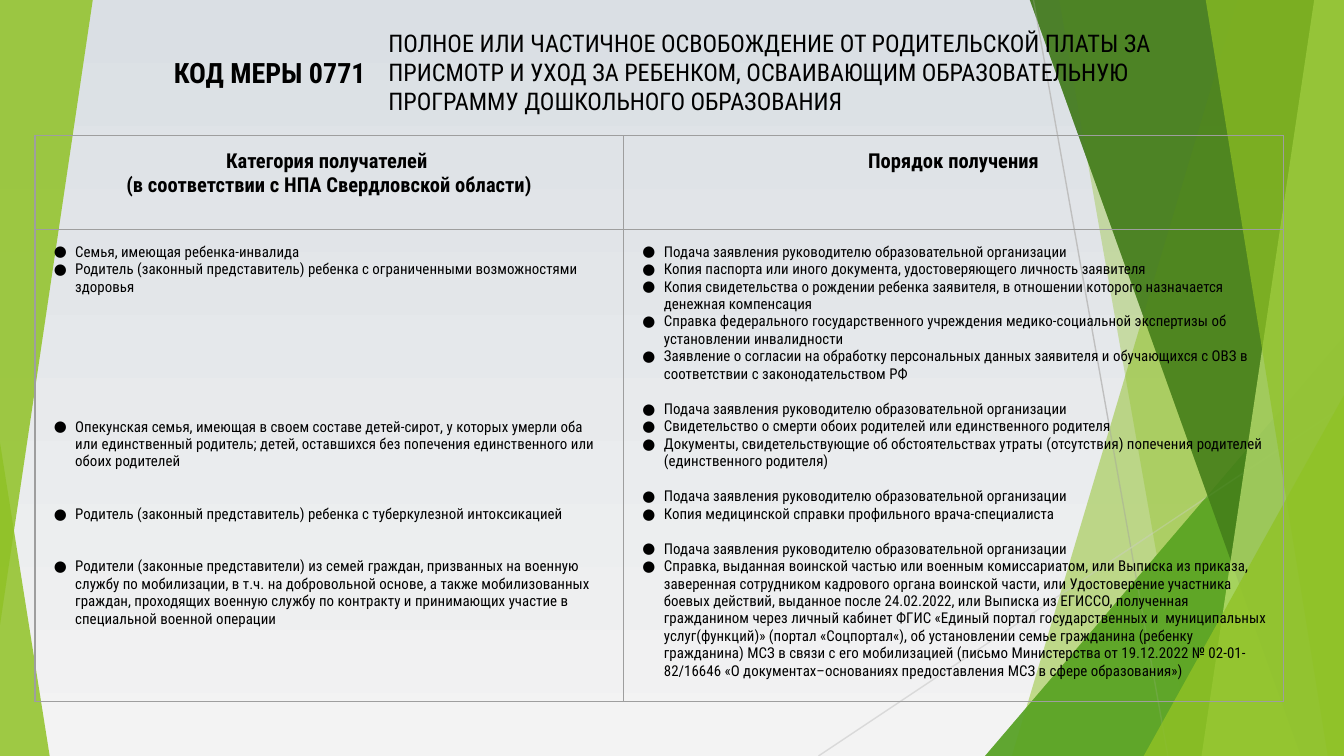
from lxml import etree
from pptx import Presentation
from pptx import util as u
from pptx.dml.color import RGBColor
from pptx.enum import shapes, text
from pptx.oxml import ns

Inches, Pt = u.Inches, u.Pt
COLORS = {
    "text": "000000", "border": "9E9E9E",
    "sky": "DADFE4", "mist": "F3F3F3",
    "lime": "90C226", "green": "54A021", "forest": "3F7819", "pale": "C0E474",
    "gray": "BFBFBF", "silver": "D9D9D9",
}
FONT = "Roboto Condensed"
WIDTH = 10
HEIGHT = WIDTH * 9 / 16
LINE = 9.38  # height of one 8 pt text line, in points
APPLY = "Подача заявления руководителю образовательной организации"

# Each item: text and the number of free lines above it
RECIPIENTS = [
    ("Семья, имеющая ребенка-инвалида", 0),
    ("Родитель (законный представитель) ребенка с ограниченными возможностями здоровья", 0),
    ("Опекунская семья, имеющая в своем составе детей-сирот, у которых умерли оба или "
     "единственный родитель; детей, оставшихся без попечения единственного или обоих родителей", 7),
    ("Родитель (законный представитель) ребенка с туберкулезной интоксикацией", 2),
    ("Родители (законные представители) из семей граждан, призванных на военную службу по "
     "мобилизации, в т.ч. на добровольной основе, а также мобилизованных граждан, проходящих "
     "военную службу по контракту и принимающих участие в специальной военной операции", 2),
]
PROCEDURE = [
    (APPLY, 0),
    ("Копия паспорта или иного документа, удостоверяющего личность заявителя", 0),
    ("Копия свидетельства о рождении ребенка заявителя, в отношении которого назначается "
     "денежная компенсация", 0),
    ("Справка федерального государственного учреждения медико-социальной экспертизы об "
     "установлении инвалидности", 0),
    ("Заявление о согласии на обработку персональных данных заявителя и обучающихся с ОВЗ в "
     "соответствии с законодательством РФ", 0),
    (APPLY, 1),
    ("Свидетельство о смерти обоих родителей или единственного родителя", 0),
    ("Документы, свидетельствующие об обстоятельствах утраты (отсутствия) попечения родителей "
     "(единственного родителя)", 0),
    (APPLY, 1),
    ("Копия медицинской справки профильного врача-специалиста", 0),
    (APPLY, 1),
    ("Справка, выданная воинской частью или военным комиссариатом, или Выписка из приказа, "
     "заверенная сотрудником кадрового органа воинской части, или Удостоверение участника "
     "боевых действий, выданное после 24.02.2022, или Выписка из ЕГИССО, полученная "
     "гражданином через личный кабинет ФГИС «Единый портал государственных и  муниципальных "
     "услуг(функций)» (портал «Соцпортал«), об установлении семье гражданина (ребенку "
     "гражданина) МСЗ в связи с его мобилизацией (письмо Министерства от 19.12.2022 № 02-01-"
     "82/16646 «О документах–основаниях предоставления МСЗ в сфере образования»)", 0),
]


def rgb(name):
    return RGBColor.from_string(COLORS[name])


def add_xml(parent, tag, **attributes):
    return etree.SubElement(parent, ns.qn(tag), attributes)


def set_alpha(fill_parent, percent):
    for color in fill_parent.iter(ns.qn("a:srgbClr")):
        add_xml(color, "a:alpha", val=str(percent * 1000))


class SlideBuilder:
    def __init__(self, slide):
        self.slide = slide

    def background(self, top, bottom, top_alpha):
        fill = self.slide.background.fill
        fill.gradient()
        fill.gradient_angle = 270
        for stop, color, position in zip(fill.gradient_stops, (top, bottom), (0, 1)):
            stop.color.rgb = rgb(color)
            stop.position = position
        first = next(self.slide.background._cSld.iter(ns.qn("a:gs")))
        set_alpha(first, top_alpha)

    def paint(self, shape, color, alpha):
        shape.shadow.inherit = False
        shape.fill.solid()
        shape.fill.fore_color.rgb = rgb(color)
        set_alpha(shape._element.spPr, alpha)
        shape.line.fill.background()

    def polygon(self, points, color, alpha):
        corners = [(Inches(x), Inches(y)) for x, y in points]
        builder = self.slide.shapes.build_freeform(*corners[0])
        builder.add_line_segments(corners[1:], close=True)
        self.paint(builder.convert_to_shape(), color, alpha)

    def triangle(self, box, apex, color, alpha, rotation=0):
        shape = self.slide.shapes.add_shape(
            shapes.MSO_SHAPE.ISOSCELES_TRIANGLE, *map(Inches, box))
        shape.adjustments[0] = apex
        shape.rotation = rotation
        self.paint(shape, color, alpha)

    def line(self, start, end, color):
        connector = self.slide.shapes.add_connector(
            shapes.MSO_CONNECTOR.STRAIGHT, *map(Inches, start + end))
        connector.line.color.rgb = rgb(color)
        connector.line.width = Pt(0.75)
        add_xml(connector._element.spPr, "a:effectLst")

    def paragraph(self, paragraph, content, size, bold=False, align=text.PP_ALIGN.LEFT):
        paragraph.text = content
        paragraph.alignment = align
        font = paragraph.font
        font.name, font.size, font.bold = FONT, Pt(size), bold
        font.color.rgb = rgb("text")

    def text_box(self, box, content, size, insets, **style):
        frame = self.slide.shapes.add_textbox(*map(Inches, box)).text_frame
        frame.word_wrap = True
        frame.vertical_anchor = text.MSO_ANCHOR.MIDDLE
        frame.margin_left = frame.margin_right = Inches(insets[0])
        frame.margin_top = frame.margin_bottom = Inches(insets[1])
        self.paragraph(frame.paragraphs[0], content, size, **style)

    def bullets(self, frame, items):
        for index, (content, free_lines) in enumerate(items):
            paragraph = frame.add_paragraph() if index else frame.paragraphs[0]
            paragraph.space_before = Pt(free_lines * LINE)
            properties = paragraph._p.get_or_add_pPr()
            properties.set("marL", str(Inches(0.2)))
            properties.set("indent", str(Inches(-0.16)))
            bullet_color = add_xml(properties, "a:buClr")
            add_xml(bullet_color, "a:srgbClr", val=COLORS["text"])
            add_xml(properties, "a:buSzPts", val="800")
            add_xml(properties, "a:buFont", typeface=FONT)
            add_xml(properties, "a:buChar", char="●")
            self.paragraph(paragraph, content, 8)

    def headings(self, frame, lines):
        for index, content in enumerate(lines):
            paragraph = frame.add_paragraph() if index else frame.paragraphs[0]
            self.paragraph(paragraph, content, 11, True, text.PP_ALIGN.CENTER)

    def cell_style(self, cell):
        cell.margin_left = cell.margin_right = Inches(0.1)
        cell.margin_top = cell.margin_bottom = Inches(0.1)
        properties = cell._tc.get_or_add_tcPr()
        for side in ("L", "R", "T", "B"):
            border = add_xml(properties, f"a:ln{side}", w=str(Pt(0.75)))
            add_xml(add_xml(border, "a:solidFill"), "a:srgbClr", val=COLORS["border"])
        cell.fill.background()

    def table(self, left, top, widths, heights, headings, columns):
        table = self.slide.shapes.add_table(
            len(heights), len(widths), Inches(left), Inches(top),
            Inches(sum(widths)), Inches(sum(heights))).table
        table.first_row = table.horz_banding = False
        for row, height in zip(table.rows, heights):
            row.height = Inches(height)
        for index, width in enumerate(widths):
            table.columns[index].width = Inches(width)
            self.headings(table.cell(0, index).text_frame, headings[index])
            self.bullets(table.cell(1, index).text_frame, columns[index])
        for cell in table.iter_cells():
            self.cell_style(cell)

    def facets(self):
        """Draw the translucent panels along the right edge."""
        def panel(top_x, bottom_x, color, alpha):
            self.polygon([(top_x, -0.01), (WIDTH, -0.01), (WIDTH, HEIGHT), (bottom_x, HEIGHT)],
                         color, alpha)

        panel(9.21, 7.53, "lime", 30)
        panel(7.88, 8.87, "lime", 20)
        self.triangle((7.33, 2.5, 2.67, HEIGHT - 2.5), 1, "green", 72)
        panel(7.66, 9.68, "forest", 70)
        panel(9.78, 8.94, "pale", 70)
        panel(8.97, 9.88, "lime", 65)
        self.triangle((8.51, 2.94, 1.49, HEIGHT - 2.94), 1, "lime", 80)


def main():
    presentation = Presentation()
    presentation.slide_width, presentation.slide_height = Inches(WIDTH), Inches(HEIGHT)
    builder = SlideBuilder(presentation.slides.add_slide(presentation.slide_layouts[6]))
    builder.background("sky", "mist", 60)
    builder.facets()
    builder.triangle((0, 3.29, 0.37, HEIGHT - 3.29), 0, "lime", 85)
    builder.line((7.69, 0), (8.69, HEIGHT), "gray")
    builder.line((WIDTH, 3.02), (6.09, HEIGHT), "silver")
    builder.facets()
    builder.triangle((0, 0, 0.69, 4.65), 1, "lime", 85, rotation=180)
    builder.table(
        0.26, 1.01, (4.38, 4.91), (0.7, 3.51),
        (["Категория получателей ", "(в соответствии с НПА Свердловской области)"],
         ["Порядок получения"]),
        (RECIPIENTS, PROCEDURE))
    builder.text_box(
        (2.82, 0.15, 6.3, 0.77),
        "ПОЛНОЕ ИЛИ ЧАСТИЧНОЕ ОСВОБОЖДЕНИЕ ОТ РОДИТЕЛЬСКОЙ ПЛАТЫ ЗА ПРИСМОТР И УХОД ЗА "
        "РЕБЕНКОМ, ОСВАИВАЮЩИМ ОБРАЗОВАТЕЛЬНУЮ ПРОГРАММУ ДОШКОЛЬНОГО ОБРАЗОВАНИЯ",
        13, (0.07, 0.04))
    builder.text_box((0.71, 0.15, 2.11, 0.77), "КОД МЕРЫ 0771", 15, (0.1, 0.1),
                     bold=True, align=text.PP_ALIGN.RIGHT)
    presentation.save("out.pptx")


if __name__ == "__main__":
    main()
